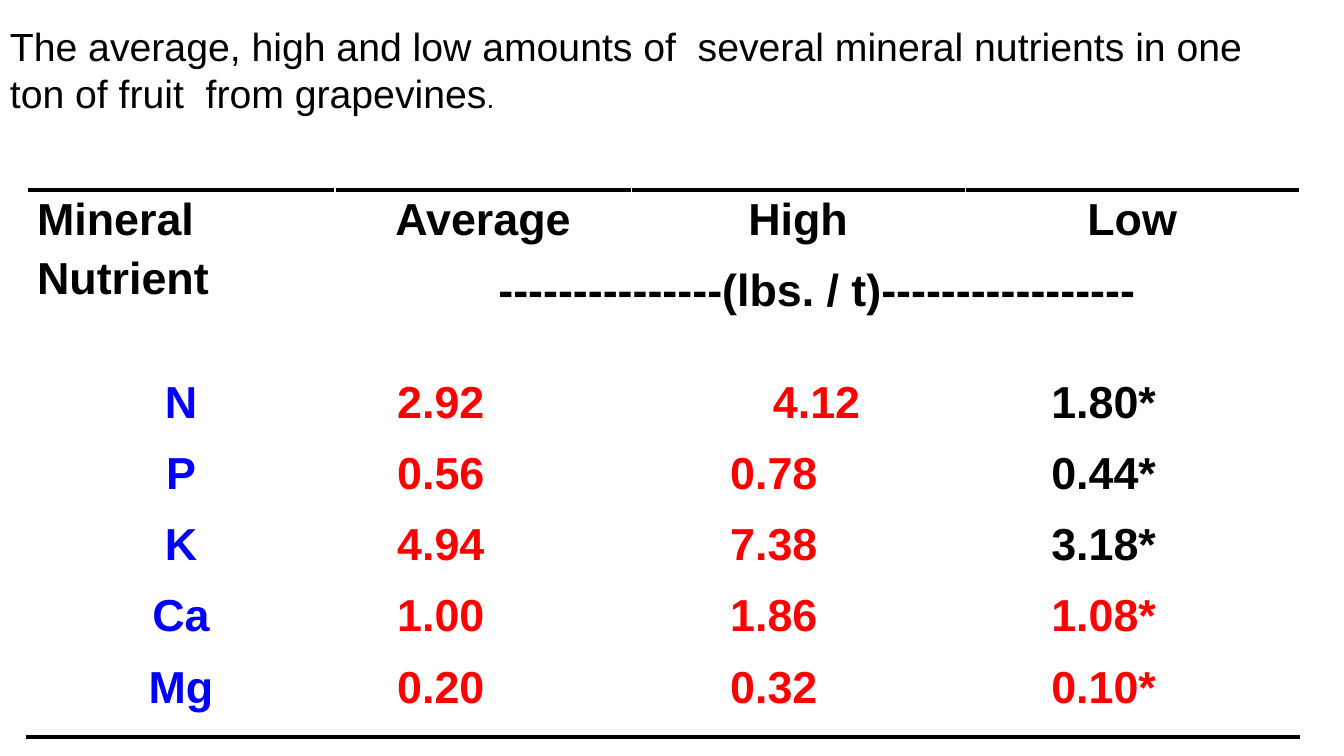
"""Build a slide with a table of mineral nutrients in grapevine fruit."""
from lxml import etree
from pptx import Presentation
from pptx.dml.color import RGBColor
from pptx.enum.text import MSO_AUTO_SIZE, PP_ALIGN
from pptx.oxml.ns import qn
from pptx.util import Inches, Pt

BLACK = RGBColor(0, 0, 0)
BLUE = RGBColor(0, 0, 255)
RED = RGBColor(255, 0, 0)
FONT = "Arial"

TITLE = ("The average, high and low amounts of  several mineral nutrients "
         "in one ton of fruit  from grapevines")
HEADINGS = {0: "Mineral\nNutrient", 1: "Average", 2: "High", 4: "Low"}
UNITS = "---------------(lbs. / t)-----------------"
NUTRIENTS = [
    ("N", "2.92", "4.12", "1.80*", BLACK),
    ("P", "0.56", "0.78", "0.44*", BLACK),
    ("K", "4.94", "7.38", "3.18*", BLACK),
    ("Ca", "1.00", "1.86", "1.08*", RED),
    ("Mg", "0.20", "0.32", "0.10*", RED),
]
MERGES = [((0, 0), (1, 0)), ((0, 2), (0, 3)), ((1, 1), (1, 4))]
MERGES += [((row, 1), (row, 2)) for row in range(2, 7)]

COLUMNS = [308, 296, 37, 297, 334]
ROWS = 2 + len(NUTRIENTS)
TABLE_LEFT, TABLE_TOP, TABLE_HEIGHT = 27, 190, 499


def px(n):
    return int(n * 914400 / 100.8)


def style_run(r, size, color, bold=False):
    r.font.name = FONT
    r.font.size = Pt(size)
    r.font.bold = bold
    r.font.color.rgb = color


def add_border(cell, tag):
    ln = etree.Element(qn(f"a:{tag}"), w=str(Pt(3)))
    fill = etree.SubElement(ln, qn("a:solidFill"))
    etree.SubElement(fill, qn("a:srgbClr"), val=str(BLACK))
    cell._tc.get_or_add_tcPr().insert(0, ln)


def write_cell(cell, text, color=BLACK, align=PP_ALIGN.CENTER, spacing=None, tab=None):
    tf = cell.text_frame
    tf.text = text
    for i, p in enumerate(tf.paragraphs):
        if tab:
            tabs = etree.SubElement(p._p.get_or_add_pPr(), qn("a:tabLst"))
            etree.SubElement(tabs, qn("a:tab"), pos=str(px(tab)), algn="dec")
        p.alignment = align
        if spacing:
            p.line_spacing = spacing
        if i:
            p.space_before = Pt(6.4)
        for r in p.runs:
            style_run(r, 32, color, bold=True)


def add_nutrient_table(slide):
    frame = slide.shapes.add_table(ROWS, len(COLUMNS), px(TABLE_LEFT), px(TABLE_TOP),
                                   px(sum(COLUMNS)), px(TABLE_HEIGHT))
    table = frame.table
    table.first_row = False
    table.horz_banding = False
    for column, width in zip(table.columns, COLUMNS):
        column.width = px(width)
    for row in table.rows:
        row.height = px(TABLE_HEIGHT / ROWS)
    for start, end in MERGES:
        table.cell(*start).merge(table.cell(*end))
    for cell in table.iter_cells():
        cell.fill.background()
    for col in range(len(COLUMNS)):
        add_border(table.cell(0, col), "lnT")
        add_border(table.cell(ROWS - 1, col), "lnB")

    for col, heading in HEADINGS.items():
        write_cell(table.cell(0, col), heading,
                   align=PP_ALIGN.CENTER if col else PP_ALIGN.LEFT)
    write_cell(table.cell(1, 1), UNITS)
    for row, (name, average, high, low, low_color) in enumerate(NUTRIENTS, 2):
        write_cell(table.cell(row, 0), name, BLUE, spacing=0.8)
        for col, value, color, tab in ((1, average, RED, 77), (3, high, RED, 77),
                                       (4, low, low_color, 101)):
            centred = (row, col) == (2, 3)
            write_cell(table.cell(row, col), value if centred else "\t" + value, color,
                       PP_ALIGN.CENTER if centred else PP_ALIGN.LEFT, 0.8, tab)


def add_title(slide):
    tf = slide.shapes.add_textbox(0, px(17), px(1261), px(105)).text_frame
    tf.word_wrap = True
    tf.auto_size = MSO_AUTO_SIZE.SHAPE_TO_FIT_TEXT
    for text, size in ((TITLE, 28), (".", 20)):
        r = tf.paragraphs[0].add_run()
        r.text = text
        style_run(r, size, BLACK)


def main():
    prs = Presentation()
    prs.slide_width, prs.slide_height = Inches(13.33), Inches(7.5)
    slide = prs.slides.add_slide(prs.slide_layouts[6])
    add_nutrient_table(slide)
    add_title(slide)
    prs.save("out.pptx")


if __name__ == "__main__":
    main()
